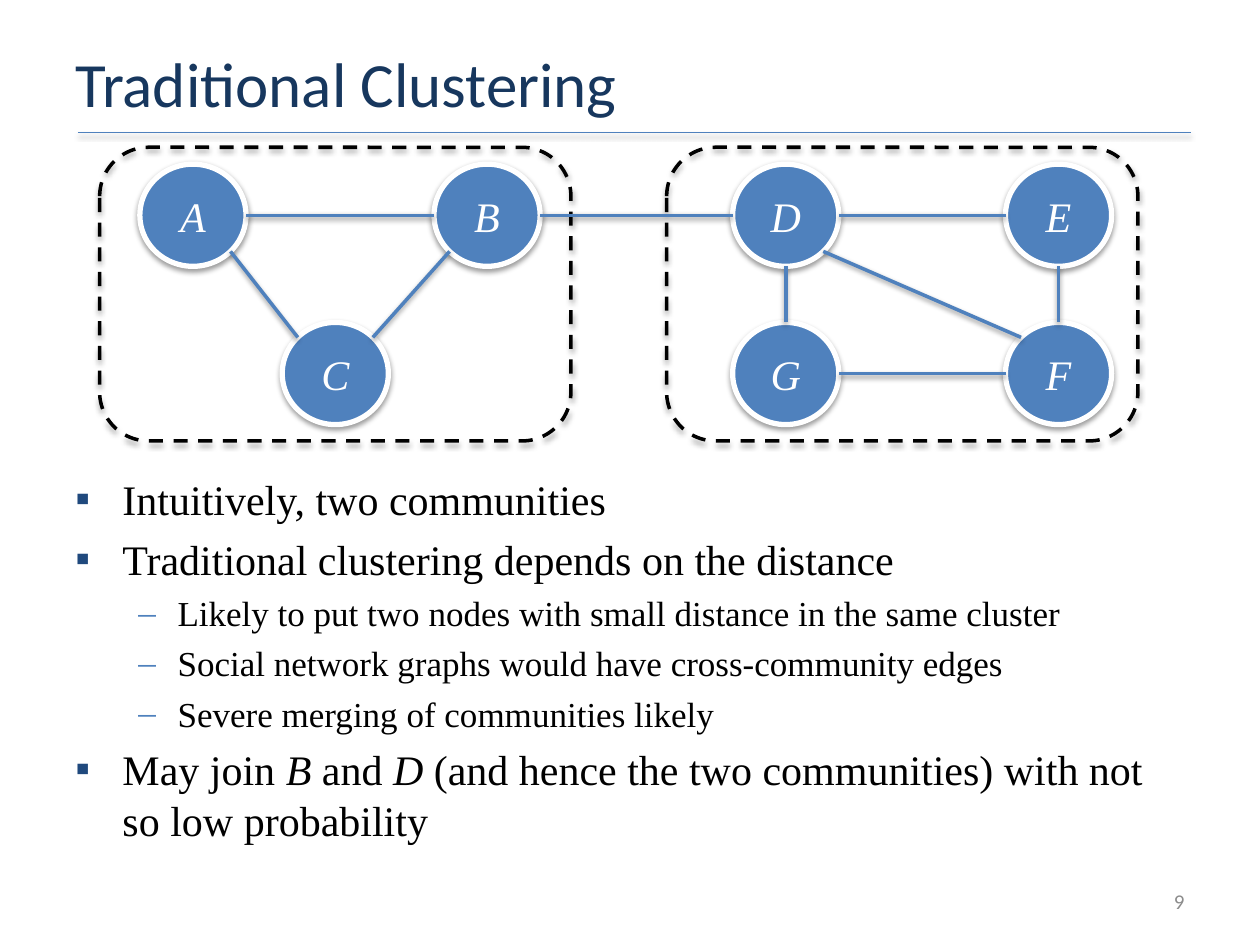
from dataclasses import dataclass

from lxml import etree
from pptx import Presentation
from pptx import util as u
from pptx.dml.color import RGBColor
from pptx.enum import dml, shapes, text
from pptx.oxml.ns import qn
from pptx.slide import Slide

COLORS = {
    "node": "4F81BD", "title": "17375E", "square": "1F497D",
    "black": "000000", "white": "FFFFFF", "number": "8C8C8C",
}
NODE_WIDTH, NODE_HEIGHT = 2.14, 2.06
DIAGONAL = 0.5 ** 0.5


def rgb(name):
    return RGBColor.from_string(COLORS[name])


@dataclass
class ClusterSlide:
    slide: Slide
    heading_font: str = "Calibri"
    body_font: str = "Times New Roman"

    def add_shadow(self, shape, opacity=38, distance=1.6):
        effects = etree.SubElement(shape._element.spPr, qn("a:effectLst"))
        shadow = etree.SubElement(
            effects, qn("a:outerShdw"), blurRad=str(u.Pt(3.1)),
            dist=str(u.Pt(distance)), dir="5400000", rotWithShape="0")
        color = etree.SubElement(shadow, qn("a:srgbClr"), val=COLORS["black"])
        etree.SubElement(color, qn("a:alpha"), val=str(opacity * 1000))

    def add_run(self, paragraph, words, size, color, font, italic=False):
        run = paragraph.add_run()
        run.text = words
        run.font.size = u.Pt(size)
        run.font.name = font
        run.font.italic = italic
        run.font.color.rgb = rgb(color)

    def text_box(self, left, top, width, height, anchor=text.MSO_ANCHOR.MIDDLE):
        box = self.slide.shapes.add_textbox(
            u.Cm(left), u.Cm(top), u.Cm(width), u.Cm(height))
        box.text_frame.word_wrap = True
        box.text_frame.vertical_anchor = anchor
        return box.text_frame

    def label(self, position, words, size, color, align=text.PP_ALIGN.LEFT):
        paragraph = self.text_box(*position).paragraphs[0]
        paragraph.alignment = align
        self.add_run(paragraph, words, size, color, self.heading_font)

    def bullets(self, position, items):
        frame = self.text_box(*position, anchor=text.MSO_ANCHOR.TOP)
        styles = [("▪", "square", 24, 0.95, 0.95), ("–", "node", 20, 2.06, 0.79)]
        for index, (level, runs) in enumerate(items):
            mark, color, size, margin, hanging = styles[level]
            paragraph = frame.add_paragraph() if index else frame.paragraphs[0]
            paragraph.level = level
            paragraph.space_before = u.Pt(round(size * 0.23, 1))
            properties = paragraph._p.get_or_add_pPr()
            properties.set("marL", str(u.Cm(margin)))
            properties.set("indent", str(-u.Cm(hanging)))
            bullet_color = etree.SubElement(properties, qn("a:buClr"))
            etree.SubElement(bullet_color, qn("a:srgbClr"), val=COLORS[color])
            etree.SubElement(properties, qn("a:buFont"), typeface=self.body_font)
            etree.SubElement(properties, qn("a:buChar"), char=mark)
            for number, words in enumerate(runs):
                # Every second run is a node name in italics
                self.add_run(paragraph, words, size, "black", self.body_font,
                             number % 2 == 1)

    def community(self, left, top, width, height):
        shape = self.slide.shapes.add_shape(
            shapes.MSO_SHAPE.ROUNDED_RECTANGLE,
            u.Cm(left), u.Cm(top), u.Cm(width), u.Cm(height))
        shape.fill.background()
        shape.line.color.rgb = rgb("black")
        shape.line.width = u.Pt(2)
        shape.line.dash_style = dml.MSO_LINE.DASH
        self.add_shadow(shape, 35, 1.8)

    def node(self, name, x, y):
        shape = self.slide.shapes.add_shape(
            shapes.MSO_SHAPE.OVAL,
            u.Cm(x - NODE_WIDTH / 2), u.Cm(y - NODE_HEIGHT / 2),
            u.Cm(NODE_WIDTH), u.Cm(NODE_HEIGHT))
        shape.fill.solid()
        shape.fill.fore_color.rgb = rgb("node")
        shape.line.color.rgb = rgb("white")
        shape.line.width = u.Pt(3)
        self.add_shadow(shape)
        frame = shape.text_frame
        frame.vertical_anchor = text.MSO_ANCHOR.MIDDLE
        paragraph = frame.paragraphs[0]
        paragraph.alignment = text.PP_ALIGN.CENTER
        self.add_run(paragraph, name, 24, "white", self.body_font, True)

    def line(self, start, end, width):
        connector = self.slide.shapes.add_connector(
            shapes.MSO_CONNECTOR.STRAIGHT, *map(u.Cm, (*start, *end)))
        connector.line.color.rgb = rgb("node")
        connector.line.width = u.Pt(width)
        self.add_shadow(connector)

    def edge(self, start, end):
        """Join two node centres from rim to rim, in steps of 45 degrees."""
        x_step = (end[0] > start[0]) - (end[0] < start[0])
        y_step = (end[1] > start[1]) - (end[1] < start[1])
        scale = DIAGONAL if x_step and y_step else 1
        x_offset = x_step * scale * NODE_WIDTH / 2
        y_offset = y_step * scale * NODE_HEIGHT / 2
        self.line((start[0] + x_offset, start[1] + y_offset),
                  (end[0] - x_offset, end[1] - y_offset), 2)


def main():
    presentation = Presentation()
    presentation.slide_width, presentation.slide_height = u.Cm(25.4), u.Cm(19.05)
    page = ClusterSlide(
        presentation.slides.add_slide(presentation.slide_layouts[6]))

    # Heading, rule and body text
    page.line((1.57, 2.67), (24, 2.67), 1)
    page.label((1.27, 0.76, 22.86, 1.8), "Traditional Clustering", 36, "title")
    page.bullets((1.27, 9.42, 22.86, 8.23), [
        (0, ["Intuitively, two communities"]),
        (0, ["Traditional clustering depends on the distance"]),
        (1, ["Likely to put two nodes with small distance in the same cluster"]),
        (1, ["Social network graphs would have cross-community edges"]),
        (1, ["Severe merging of communities likely"]),
        (0, ["May join ", "B ", "and ", "D ",
             "(and hence the two communities) with not so low probability"]),
    ])
    page.label((18.2, 17.66, 5.93, 1.02), "9", 12, "number",
               text.PP_ALIGN.RIGHT)

    # Two communities
    for left in (2.01, 13.44):
        page.community(left, 2.97, 9.5, 5.92)

    # Graph
    upper, lower = 4.34, 7.53
    nodes = {
        "A": (3.89, upper), "B": (9.82, upper), "C": (6.76, lower),
        "D": (15.84, upper), "E": (21.34, upper),
        "G": (15.84, lower), "F": (21.34, lower),
    }
    for name, center in nodes.items():
        page.node(name, *center)
    for start, end in ("AB", "AC", "BC", "DB", "DG", "DE", "GF", "DF", "EF"):
        page.edge(nodes[start], nodes[end])

    presentation.save("out.pptx")


if __name__ == "__main__":
    main()
